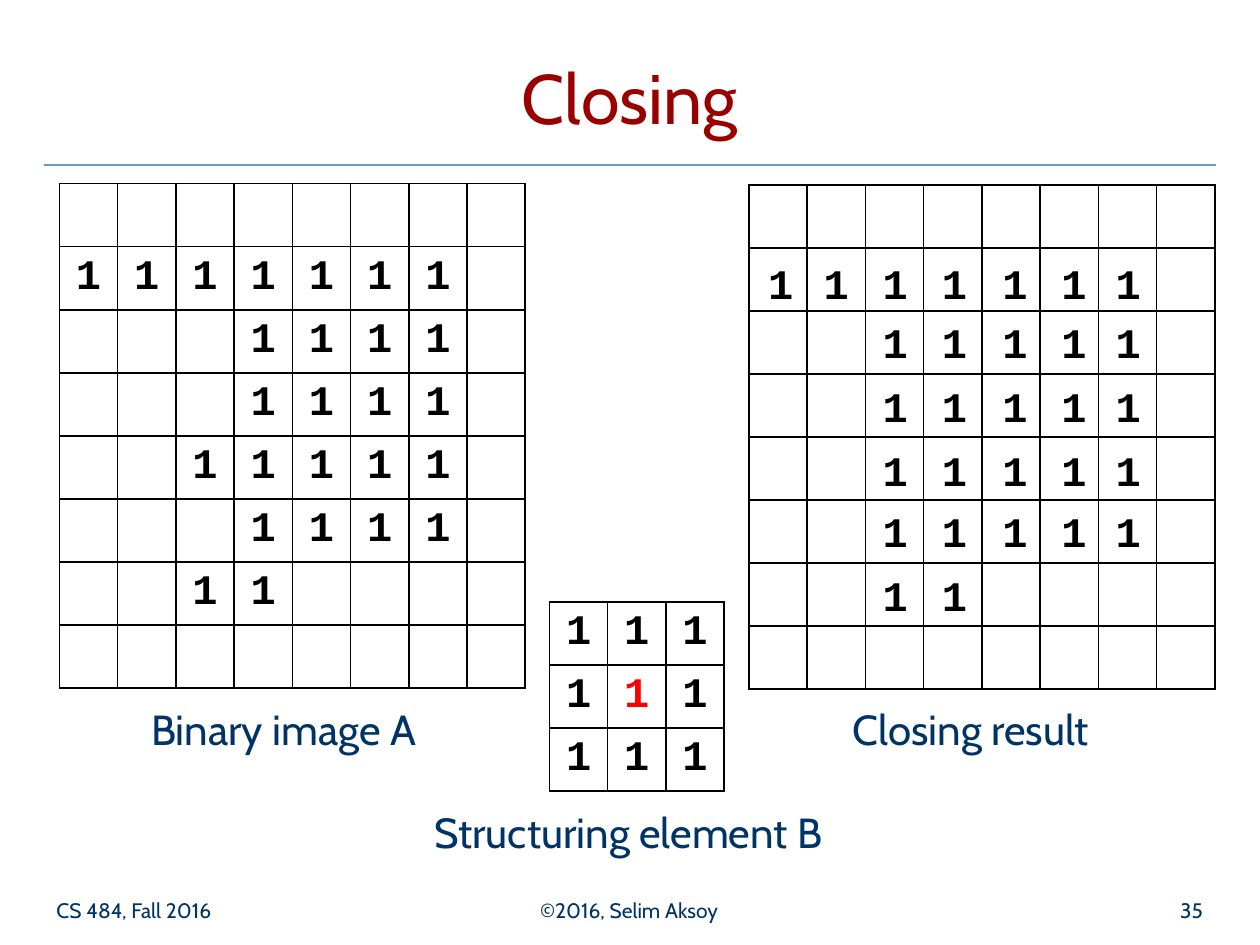
from lxml import etree
from pptx import Presentation
from pptx.dml.color import RGBColor
from pptx.enum.shapes import MSO_CONNECTOR
from pptx.enum.text import MSO_ANCHOR, PP_ALIGN
from pptx.oxml.ns import qn
from pptx.util import Pt

NAVY = RGBColor(0x00, 0x33, 0x66)
MAROON = RGBColor(0x99, 0x00, 0x00)
BLUE = RGBColor(0x66, 0x99, 0xCC)
BLACK = RGBColor(0x00, 0x00, 0x00)
RED = RGBColor(0xFF, 0x00, 0x00)

LEFT, CENTER, RIGHT = PP_ALIGN.LEFT, PP_ALIGN.CENTER, PP_ALIGN.RIGHT
TOP, MIDDLE, BOTTOM = MSO_ANCHOR.TOP, MSO_ANCHOR.MIDDLE, MSO_ANCHOR.BOTTOM
STRAIGHT = MSO_CONNECTOR.STRAIGHT

COL, ROW = 33.3, 36  # cell size of every grid

IMAGE = [
    "        ",
    "1111111 ",
    "   1111 ",
    "   1111 ",
    "  11111 ",
    "   1111 ",
    "  11     ",
    "        ",
]
KERNEL = ["111"] * 3
BLANK = [" " * 8] * 8

# Digits laid over the result grid
MARK_X = [427.7, 459.4, 493.2, 527, 561.6, 595.4, 626.4]
MARK_Y = [145.4, 179.3, 216, 252.7, 287.3, 324]
MARKS = ["1111111"] + ["  11111"] * 4 + ["  11   "]


class Deck:
    def __init__(self):
        self.prs = Presentation()
        self.prs.slide_width, self.prs.slide_height = Pt(720), Pt(540)
        self.slide = self.prs.slides.add_slide(self.prs.slide_layouts[6])
        self.font, self.mono = "Cabin", "Courier New"

    def style(self, para, size, color, align, name, bold=False):
        para.alignment = align
        for run in para.runs:
            font = run.font
            font.name, font.size, font.bold = name, Pt(size), bold
            font.color.rgb = color

    def text(self, words, x, y, w, h, size, color=NAVY, align=LEFT,
             anchor=BOTTOM, wrap=True):
        box = self.slide.shapes.add_textbox(Pt(x), Pt(y), Pt(w), Pt(h))
        frame = box.text_frame
        frame.word_wrap, frame.vertical_anchor = wrap, anchor
        frame.text = words
        self.style(frame.paragraphs[0], size, color, align, self.font)
        return frame

    def mark(self, x, y):
        frame = self.text("1", x, y, 36.7, 31.7, 24, anchor=MIDDLE)
        frame.margin_left = frame.margin_right = Pt(1.44)
        frame.margin_top = frame.margin_bottom = Pt(1.44)
        para = frame.paragraphs[0]
        para.space_before = Pt(7)
        self.style(para, 24, BLACK, CENTER, self.mono, True)

    def rule(self, x1, x2, y):
        line = self.slide.shapes.add_connector(
            STRAIGHT, Pt(x1), Pt(y), Pt(x2), Pt(y))
        line.line.color.rgb, line.line.width = BLUE, Pt(0.75)
        etree.SubElement(line._element.spPr, qn("a:effectLst"))

    def border(self, cell):
        props = cell._tc.get_or_add_tcPr()
        for i, side in enumerate(("lnL", "lnR", "lnT", "lnB")):
            line = etree.Element(qn("a:" + side), w=str(Pt(1)))
            fill = etree.SubElement(line, qn("a:solidFill"))
            etree.SubElement(fill, qn("a:srgbClr"), val=str(BLACK))
            props.insert(i, line)

    def grid(self, rows, x, y, origin=None):
        high, wide = len(rows), len(rows[0])
        table = self.slide.shapes.add_table(
            high, wide, Pt(x), Pt(y), Pt(COL * wide), Pt(ROW * high)).table
        table.first_row = table.horz_banding = False
        for col in table.columns:
            col.width = Pt(COL)
        for r in range(high):
            table.rows[r].height = Pt(ROW)
            for c in range(wide):
                cell = table.cell(r, c)
                cell.fill.background()
                cell.vertical_anchor = MIDDLE
                self.border(cell)
                if rows[r][c] == "1":
                    cell.text_frame.text = "1"
                    color = RED if (r, c) == origin else BLACK
                    self.style(cell.text_frame.paragraphs[0], 24, color,
                               CENTER, self.mono, True)


def main():
    deck = Deck()

    # Title, rule and footer
    deck.rule(25.2, 694.8, 94.3)
    deck.text("CS 484, Fall 2016", 25.2, 505.4, 150, 25.2, 12)
    deck.text("©2016, Selim Aksoy", 245.5, 505.4, 228, 25.2, 12, align=CENTER)
    deck.text("35", 544.5, 505.4, 150, 25.2, 12, align=RIGHT)
    deck.text("Closing", 25.2, 15.1, 669, 67.7, 40, MAROON, CENTER)

    # Captions
    for words, x, y, w in (("Binary image A", 79.2, 398.2, 174.2),
                           ("Structuring element B", 241.2, 457.2, 244.8),
                           ("Closing result", 480.2, 398.2, 157)):
        deck.text(words, x, y, w, 36, 24, anchor=TOP, wrap=False)

    # Grids
    deck.grid(BLANK, 428, 105.8)
    deck.grid(IMAGE, 33.9, 105)
    deck.grid(KERNEL, 314, 344, origin=(1, 1))

    # Result digits
    for y, row in zip(MARK_Y, MARKS):
        for x, sign in zip(MARK_X, row):
            if sign == "1":
                deck.mark(x, y)

    deck.prs.save("out.pptx")


if __name__ == "__main__":
    main()
